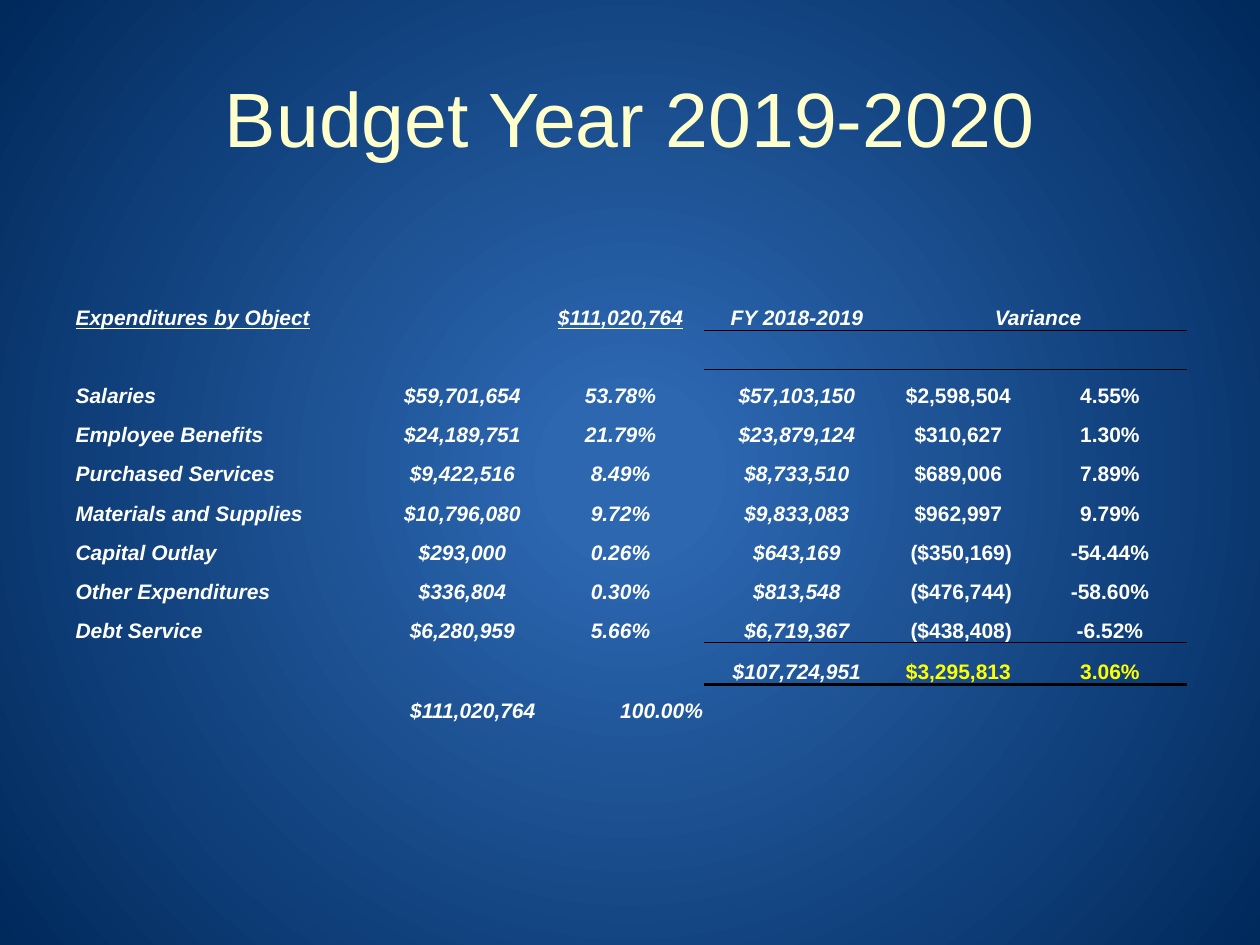
from lxml import etree
from pptx import Presentation
from pptx.dml.color import RGBColor
from pptx.enum.text import MSO_ANCHOR, PP_ALIGN
from pptx.oxml import parse_xml
from pptx.oxml.ns import nsdecls, qn
from pptx.util import Inches, Pt

LEFT, MID, RIGHT = PP_ALIGN.LEFT, PP_ALIGN.CENTER, PP_ALIGN.RIGHT
LOW, MIDDLE = MSO_ANCHOR.BOTTOM, MSO_ANCHOR.MIDDLE
PLAIN = "{2D5ABB26-0587-4C30-8999-92F81FD0307C}"  # no style, no grid
HUES = {"glow": "2C67B0", "edge": "00295C", "title": "FFFFCC",
        "text": "FFFFFF", "total": "FFFF00", "rule": "000000"}
WIDE, HIGH = Inches(10), Inches(7.5)
COLS = [2.49, 1.18, 1.33, 1.47, 1.14, 1.22]
ROWS = [0.3] * 3 + [0.31] * 7 + [0.33, 0.31]
HEAD, LAST, SUM = 1, 9, 10
RULES = {HEAD: 0.5, LAST: 0.5, SUM: 2}  # line width below a row
BLANK = [""] * 6
DATA = [
    BLANK,
    ["Expenditures by Object", "", "$111,020,764", "FY 2018-2019", "Variance", ""],
    BLANK,
    ["Salaries", "$59,701,654", "53.78%", "$57,103,150", "$2,598,504 ", "4.55%"],
    ["Employee Benefits", "$24,189,751", "21.79%", "$23,879,124", "$310,627 ", "1.30%"],
    ["Purchased Services", "$9,422,516", "8.49%", "$8,733,510", "$689,006 ", "7.89%"],
    ["Materials and Supplies", "$10,796,080", "9.72%", "$9,833,083", "$962,997 ", "9.79%"],
    ["Capital Outlay", "$293,000", "0.26%", "$643,169", "($350,169)", "-54.44%"],
    ["Other Expenditures", "$336,804", "0.30%", "$813,548", "($476,744)", "-58.60%"],
    ["Debt Service", "$6,280,959", "5.66%", "$6,719,367", "($438,408)", "-6.52%"],
    ["", "", "", "$107,724,951", "$3,295,813 ", "3.06%"],
    ["", "$111,020,764", "100.00%", "", "", ""],
]


def write(frame, text, hue, align, **looks):
    para = frame.paragraphs[0]
    para.alignment = align
    run = para.add_run()
    run.text = text
    run.font.color.rgb = RGBColor.from_string(HUES[hue])
    for name, value in {"name": "Arial", **looks}.items():
        setattr(run.font, name, value)


def rule(cell, side, width):
    """Draw one cell border; side is lnT or lnB."""
    line = etree.SubElement(cell._tc.get_or_add_tcPr(), qn("a:" + side), w=str(Pt(width)))
    fill = etree.SubElement(line, qn("a:solidFill"))
    etree.SubElement(fill, qn("a:srgbClr"), val=HUES["rule"])


deck = Presentation()
deck.slide_width, deck.slide_height = WIDE, HIGH
slide = deck.slides.add_slide(deck.slide_layouts[6])

# Radial background
slide.element.cSld.insert(0, parse_xml(
    f'<p:bg {nsdecls("p", "a")}><p:bgPr><a:gradFill rotWithShape="1"><a:gsLst>'
    f'<a:gs pos="10000"><a:srgbClr val="{HUES["glow"]}"/></a:gs>'
    f'<a:gs pos="100000"><a:srgbClr val="{HUES["edge"]}"/></a:gs></a:gsLst>'
    '<a:path path="circle"><a:fillToRect l="50000" t="50000" r="50000" b="50000"/>'
    '</a:path></a:gradFill><a:effectLst/></p:bgPr></p:bg>'))

# Title
title = slide.shapes.add_textbox(
    int(WIDE * 0.05), int(HIGH * 0.04), int(WIDE * 0.9), Inches(1.25)).text_frame
title.word_wrap = True
title.vertical_anchor = MIDDLE
write(title, "Budget Year 2019-2020", "title", MID, size=Pt(44))

# Budget table
table = slide.shapes.add_table(
    len(ROWS), len(COLS), Inches(0.59), Inches(2),
    Inches(sum(COLS)), Inches(sum(ROWS))).table
table.first_row = table.horz_banding = False
table._tbl.tblPr.find(qn("a:tableStyleId")).text = PLAIN
for col, width in zip(table.columns, COLS):
    col.width = Inches(width)
for row, height in zip(table.rows, ROWS):
    row.height = Inches(height)
table.cell(HEAD, 4).merge(table.cell(HEAD, 5))

box = {"margin_left": Inches(0.01), "margin_right": Inches(0.01),
       "margin_top": Inches(0.01), "margin_bottom": 0, "vertical_anchor": LOW}
for r, texts in enumerate(DATA):
    for c, text in enumerate(texts):
        cell = table.cell(r, c)
        for name, value in box.items():
            setattr(cell, name, value)
        if c >= 3:
            for side, above in (("lnT", r - 1), ("lnB", r)):
                if above in RULES:
                    rule(cell, side, RULES[above])
        cell.fill.background()
        if text:
            write(cell.text_frame, text,
                  "total" if r == SUM and c > 3 else "text",
                  LEFT if c == 0 else RIGHT if r > SUM else MID,
                  size=Pt(12), bold=True, italic=r == HEAD or c < 4,
                  underline=r == HEAD and c < 3)

deck.save("out.pptx")
